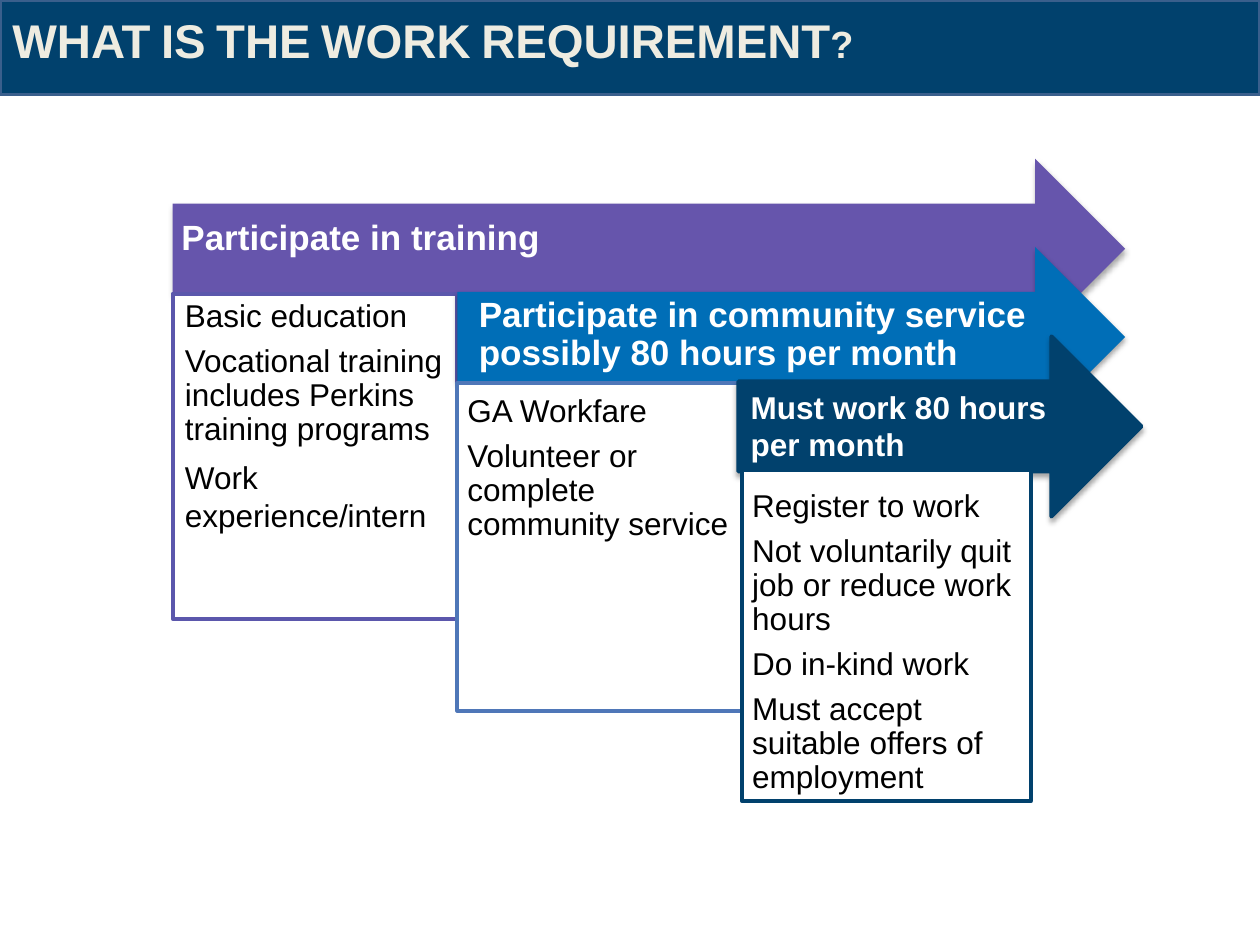
from lxml import etree
from pptx import Presentation
from pptx.dml.color import RGBColor as RGB
from pptx.enum.shapes import MSO_SHAPE as SHAPE
from pptx.enum.text import MSO_ANCHOR as ANCHOR, PP_ALIGN as ALIGN
from pptx.oxml import parse_xml
from pptx.oxml.ns import nsdecls, qn
from pptx.util import Inches, Pt

COLORS = {
    "navy": "01416D", "edge": "3A5F8C", "cream": "EEECE1",
    "purple": "6655AC", "violet": "5B57AC", "blue": "006EB7",
    "steel": "4F77B8", "white": "FFFFFF", "black": "000000",
}
HEAD = {"size": Pt(20), "bold": True, "color": "white"}
WORK = {"size": Pt(18), "bold": True, "color": "white"}
BODY = {"size": Pt(18), "bold": False, "color": "black"}
TITLE = {"size": Pt(27), "bold": True, "color": "cream"}
TIGHT = {"line_spacing": 0.9, "space_after": Pt(6.3)}
HEAD_TIGHT = {"line_spacing": 0.9, "space_after": Pt(7)}
PLAIN = {}
BASE = (0.1, 0.05, 0.1, 0.05)
PAD = (0.08,) * 4
HEAD_PAD = (0.07, 0.07, 0.28, 0.23)


def rgb(name):
    return RGB.from_string(COLORS[name])


def add_block(shapes, kind, at, fill, line=None, width=2.25):
    block = shapes.add_shape(kind, *map(Inches, at))
    block.shadow.inherit = False
    block.fill.solid()
    block.fill.fore_color.rgb = rgb(fill)
    if line:
        block.line.color.rgb = rgb(line)
        block.line.width = Pt(width)
    else:
        block.line.fill.background()
    return block


def add_arrow(shapes, at, fill, line=None):
    """Right arrow with a soft shadow below it."""
    arrow = add_block(shapes, SHAPE.RIGHT_ARROW, at, fill, line)
    effects = arrow._element.spPr.find(qn("a:effectLst"))
    effects.append(parse_xml(
        f'<a:outerShdw {nsdecls("a")} blurRad="{Pt(3.1)}" dist="{Pt(1.8)}" '
        'dir="5400000" rotWithShape="0"><a:srgbClr val="000000">'
        '<a:alpha val="35000"/></a:srgbClr></a:outerShdw>'))
    return arrow


def write(shape, items, font, pad=BASE, anchor=ANCHOR.TOP):
    """Fill a shape with (text, spacing) paragraphs."""
    frame = shape.text_frame
    frame.word_wrap = True
    frame.vertical_anchor = anchor
    for side, gap in zip(("left", "top", "right", "bottom"), pad):
        setattr(frame, f"margin_{side}", Inches(gap))
    for i, (text, space) in enumerate(items):
        para = frame.add_paragraph() if i else frame.paragraphs[0]
        para.alignment = ALIGN.LEFT
        for key, value in space.items():
            setattr(para, key, value)
        run = para.add_run()
        run.text = text
        run.font.name = "Arial"
        for key, value in font.items():
            if key == "color":
                run.font.color.rgb = rgb(value)
            else:
                setattr(run.font, key, value)
    return frame


def add_text(shapes, at, items, font, pad=BASE, anchor=ANCHOR.TOP):
    box = shapes.add_textbox(*map(Inches, at))
    return write(box, items, font, pad, anchor)


def add_title(shapes):
    add_block(shapes, SHAPE.RECTANGLE, (0, 0, 10, 0.75), "navy", "edge", 2)
    frame = add_text(shapes, (0, 0, 9.5, 0.58),
                     [("WHAT IS THE WORK REQUIREMENT?", PLAIN)],
                     TITLE, (0.1, 0.09, 0.1, 0.05))
    frame.paragraphs[0].runs[0].font._element.set("cap", "small")


def add_training(shapes):
    add_arrow(shapes, (1.37, 1.26, 7.56, 1.43), "purple")
    add_text(shapes, (1.37, 1.62, 7.2, 0.72),
             [("Participate in training", HEAD_TIGHT)],
             HEAD, HEAD_PAD, ANCHOR.MIDDLE)
    card = add_block(shapes, SHAPE.RECTANGLE, (1.37, 2.33, 2.26, 2.58),
                     "white", "violet")
    write(card, [
        ("Basic education", TIGHT),
        ("Vocational training includes Perkins training programs", TIGHT),
        ("Work experience/intern", PLAIN),
    ], BODY)


def add_service(shapes):
    add_arrow(shapes, (3.63, 1.96, 5.3, 1.43), "blue")
    add_text(shapes, (3.73, 2.38, 4.94, 0.72),
             [("Participate in community service possibly 80 hours per month",
               HEAD_TIGHT)], HEAD, HEAD_PAD, ANCHOR.MIDDLE)
    add_block(shapes, SHAPE.RECTANGLE, (3.63, 3.04, 2.26, 2.6),
              "white", "steel")
    add_text(shapes, (3.63, 3.06, 2.26, 2.6), [
        ("GA Workfare", TIGHT),
        ("Volunteer or complete community service", TIGHT),
    ], BODY, PAD)


def add_work(shapes):
    arrow = add_arrow(shapes, (5.86, 2.67, 3.2, 1.43), "navy", "navy")
    write(arrow, [("Must work 80 hours per month", PLAIN)], WORK)
    add_block(shapes, SHAPE.RECTANGLE, (5.89, 3.73, 2.29, 2.63),
              "white", "navy")
    add_text(shapes, (5.89, 3.81, 2.29, 2.41), [
        ("Register to work", TIGHT),
        ("Not voluntarily quit job or reduce work hours", TIGHT),
        ("Do in-kind work", TIGHT),
        ("Must accept suitable offers of employment", TIGHT),
    ], BODY, PAD)


def main():
    deck = Presentation()
    deck.slide_width, deck.slide_height = Inches(10), Inches(7.5)
    slide = deck.slides.add_slide(deck.slide_layouts[6])
    add_title(slide.shapes)
    for add_step in (add_training, add_service, add_work):
        add_step(slide.shapes.add_group_shape().shapes)
    deck.save("out.pptx")


if __name__ == "__main__":
    main()
